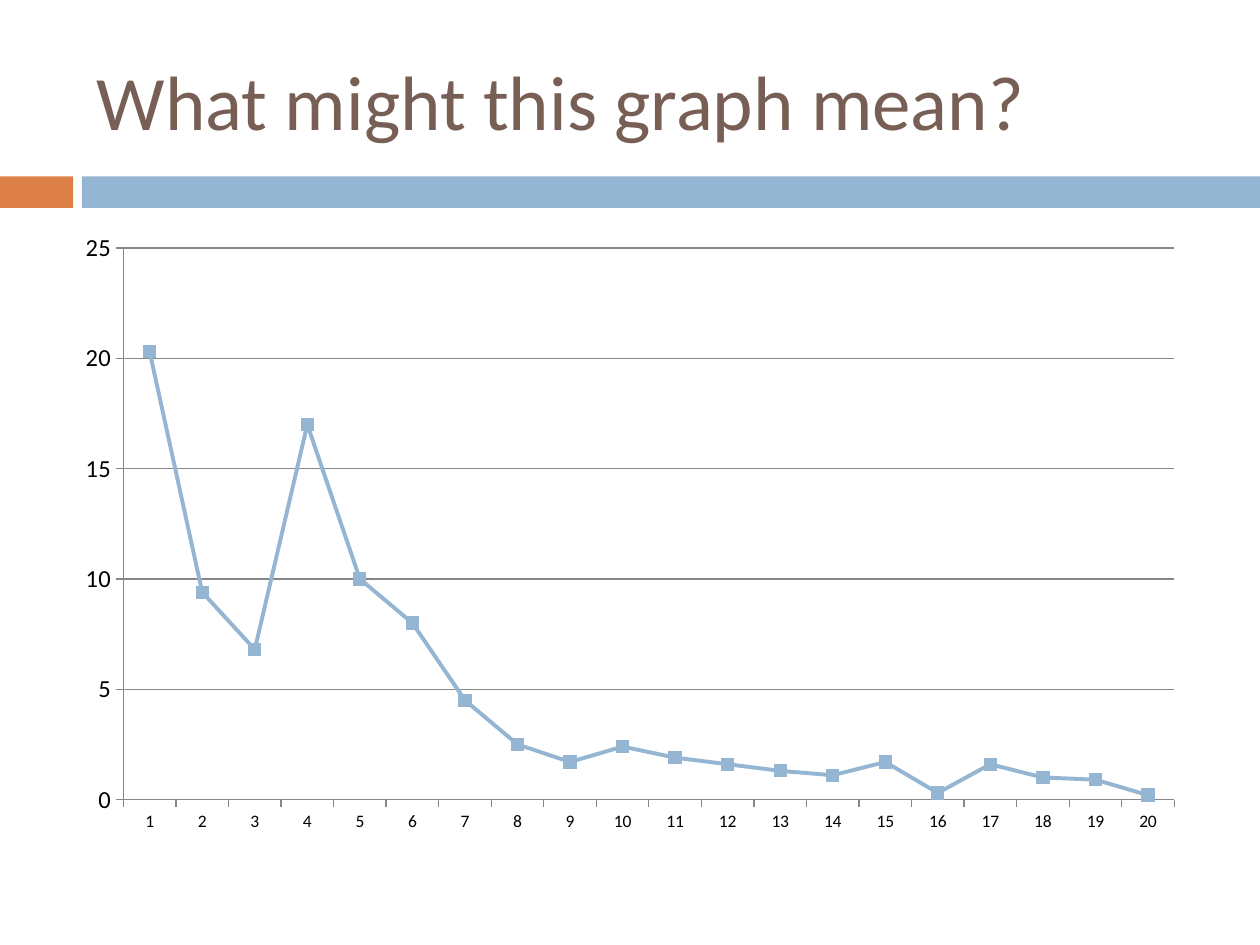
from pptx import Presentation
from pptx.chart.data import CategoryChartData
from pptx.dml.color import RGBColor
from pptx.enum.chart import XL_CHART_TYPE as ChartType, XL_MARKER_STYLE as MarkerStyle
from pptx.enum.chart import XL_TICK_MARK as TickMark
from pptx.enum.shapes import MSO_SHAPE as Shape
from pptx.enum.text import MSO_ANCHOR as Anchor
from pptx.util import Inches, Pt

ORANGE = RGBColor(0xDD, 0x80, 0x47)
BLUE = RGBColor(0x94, 0xB6, 0xD2)
BROWN = RGBColor(0x77, 0x5F, 0x55)
GRAY = RGBColor(0x86, 0x86, 0x86)
BLACK = RGBColor(0, 0, 0)
FONT = "Calibri"
WIDTH, HEIGHT = 10, 7.5
BAND_TOP, BAND_HEIGHT = 1.4, 0.25
BAND_SPLIT, BAND_GAP = 0.58, 0.07
VALUES = (20.3, 9.4, 6.8, 17, 10, 8, 4.5, 2.5, 1.7, 2.4,
          1.9, 1.6, 1.3, 1.1, 1.7, 0.3, 1.6, 1, 0.9, 0.2)


def add_band(slide, left, right, color):
    """Add one piece of the divider band between two horizontal positions."""
    shape = slide.shapes.add_shape(
        Shape.RECTANGLE, Inches(left), Inches(BAND_TOP),
        Inches(right - left), Inches(BAND_HEIGHT))
    shape.shadow.inherit = False
    shape.fill.solid()
    shape.fill.fore_color.rgb = color
    shape.line.fill.background()


def add_title(slide, text):
    """Add the slide title above the band."""
    shape = slide.shapes.add_textbox(
        Inches(0.67), Inches(0.25), Inches(8.92), Inches(1.08))
    frame = shape.text_frame
    frame.word_wrap = True
    frame.vertical_anchor = Anchor.MIDDLE
    paragraph = frame.paragraphs[0]
    paragraph.text = text
    paragraph.font.name = FONT
    paragraph.font.size = Pt(44)
    paragraph.font.color.rgb = BROWN


def style_line(line, color, width):
    """Set the colour and width of a chart line."""
    line.color.rgb = color
    line.width = Pt(width)


def style_axis(axis, size):
    """Give an axis its label size, outer ticks and gray line."""
    axis.tick_labels.font.size = Pt(size)
    axis.major_tick_mark = TickMark.OUTSIDE
    axis.minor_tick_mark = TickMark.NONE
    style_line(axis.format.line, GRAY, 0.75)


def add_line_chart(slide, values):
    """Add the line chart with numbered categories."""
    data = CategoryChartData()
    data.categories = [str(number) for number in range(1, len(values) + 1)]
    data.add_series("Series 1", values)
    chart = slide.shapes.add_chart(
        ChartType.LINE_MARKERS, Inches(0.5), Inches(1.75),
        Inches(0.9 * WIDTH), Inches(0.66 * HEIGHT), data).chart
    chart.has_legend = False
    chart.has_title = False
    chart.font.name = FONT
    chart.font.size = Pt(10)
    chart.font.color.rgb = BLACK

    style_axis(chart.category_axis, 10)
    value_axis = chart.value_axis
    style_axis(value_axis, 14)
    value_axis.minimum_scale, value_axis.maximum_scale = 0, 25
    value_axis.major_unit = 5
    value_axis.has_major_gridlines = True
    style_line(value_axis.major_gridlines.format.line, GRAY, 0.75)

    chart.plots[0].vary_by_categories = False
    series = chart.plots[0].series[0]
    series.smooth = False
    style_line(series.format.line, BLUE, 2.25)
    marker = series.marker
    marker.style = MarkerStyle.SQUARE
    marker.size = 7
    marker.format.fill.solid()
    marker.format.fill.fore_color.rgb = BLUE
    marker.format.line.color.rgb = BLUE


def main():
    """Build and save the presentation."""
    presentation = Presentation()
    presentation.slide_width = Inches(WIDTH)
    presentation.slide_height = Inches(HEIGHT)
    slide = presentation.slides.add_slide(presentation.slide_layouts[6])
    add_band(slide, 0, BAND_SPLIT, ORANGE)
    add_band(slide, BAND_SPLIT + BAND_GAP, WIDTH, BLUE)
    add_title(slide, "What might this graph mean?")
    add_line_chart(slide, VALUES)
    presentation.save("out.pptx")


if __name__ == "__main__":
    main()
